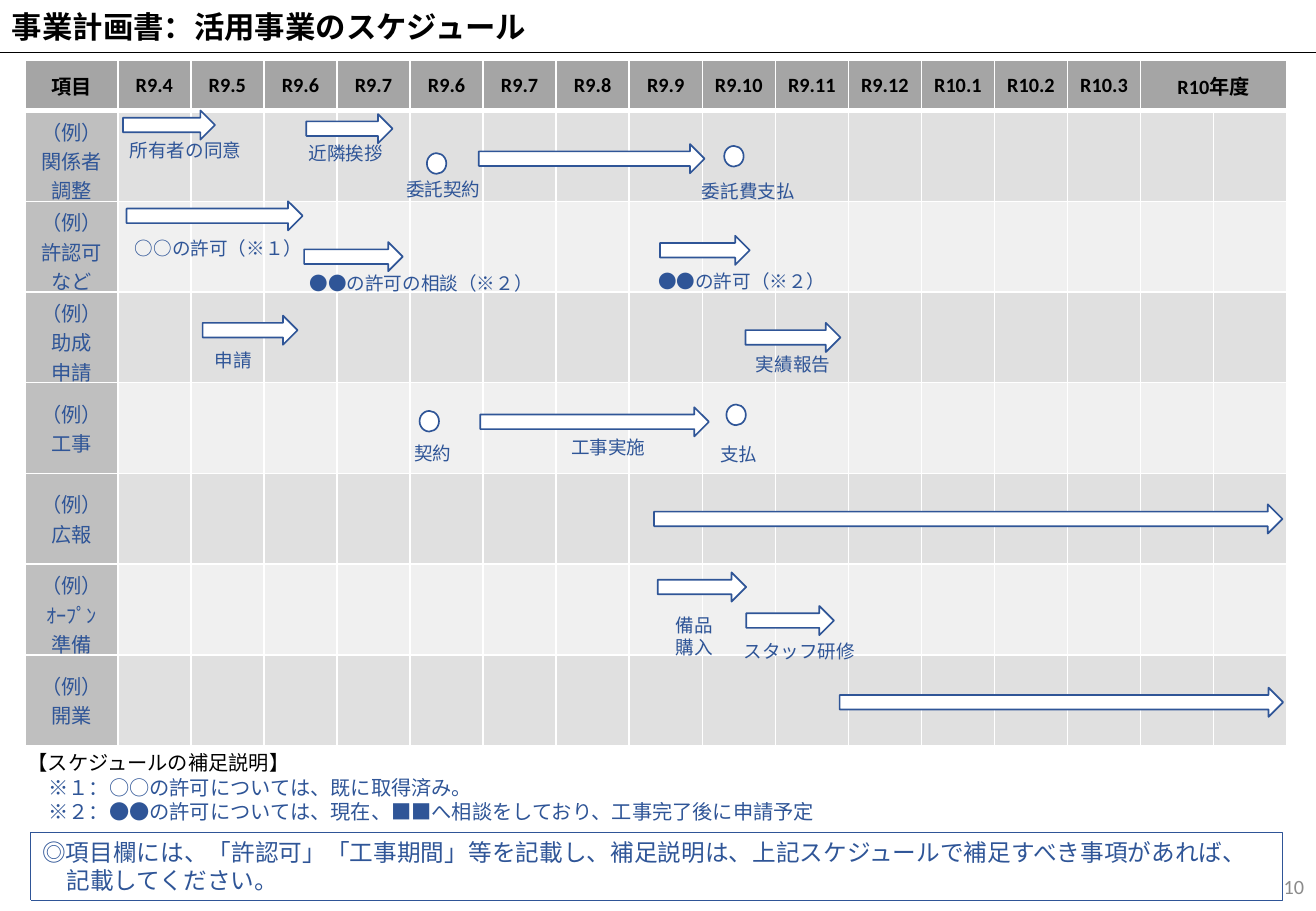
from collections import namedtuple

from lxml import etree
from pptx import Presentation
from pptx.dml.color import RGBColor
from pptx.enum.dml import MSO_LINE
from pptx.enum.shapes import MSO_CONNECTOR, MSO_SHAPE
from pptx.enum.text import MSO_ANCHOR as Anchor, PP_ALIGN as Align
from pptx.oxml import parse_xml
from pptx.oxml.ns import nsdecls, qn
from pptx.util import Inches, Pt

BLACK = RGBColor(0x00, 0x00, 0x00)
WHITE = RGBColor(0xFF, 0xFF, 0xFF)
BLUE = RGBColor(0x2F, 0x55, 0x97)
PAGE_GRAY = RGBColor(0x8B, 0x8B, 0x8B)
HEADER_GRAY = RGBColor(0xA5, 0xA5, 0xA5)
LABEL_GRAY = RGBColor(0xBF, 0xBF, 0xBF)
BANDS = [RGBColor(0xE0, 0xE0, 0xE0), RGBColor(0xF0, 0xF0, 0xF0)]

Box = namedtuple("Box", "left top width height")
SLIDE = Box(0, 0, 10.83, 7.5)
SCHEDULE = Box(0.21, 0.5, 10.38, 5.64)
LABEL_WIDTH, HEADER_HEIGHT = 0.76, 0.41

MONTHS = ["R9.4", "R9.5", "R9.6", "R9.7", "R9.6", "R9.7", "R9.8", "R9.9", "R9.10",
          "R9.11", "R9.12", "R10.1", "R10.2", "R10.3", "R10年度"]
COLUMNS = len(MONTHS) + 1  # the last heading spans two columns
ITEMS = [["関係者", "調整"], ["許認可など"], ["助成", "申請"], ["工事"], ["広報"],
         ["ｵｰﾌﾟﾝ", "準備"], ["開業"]]

# Marks on the schedule: month column, item row, length in columns
ARROWS = [
    (0.07, 0, 1.26), (2.58, 0.04, 1.18), (4.94, 0.37, 3.09),
    (0.12, 1, 2.41), (2.55, 1.45, 1.35), (7.42, 1.38, 1.23),
    (1.16, 2.26, 1.3), (8.59, 2.34, 1.3), (4.96, 3.27, 3.13),
    (7.34, 4.34, 8.6), (7.39, 5.09, 1.21), (8.6, 5.46, 1.2), (9.88, 6.36, 6.07),
]
MILESTONES = [(4.23, 0.47), (8.3, 0.39), (4.13, 3.31), (8.33, 3.24)]
CAPTIONS = [
    (0, 0.25, 2.11, "所有者の同意"), (2.45, 0.28, 1.53, "近隣挨拶"),
    (3.78, 0.68, 1.53, "委託契約"), (7.83, 0.7, 2.23, "委託費支払"),
    (0.07, 1.33, 3.01, "○○の許可（※１）"), (2.46, 1.71, 3.68, "●●の許可の相談（※２）"),
    (7.23, 1.69, 3.03, "●●の許可（※２）"), (1.16, 2.56, 1.06, "申請"),
    (8.57, 2.6, 1.53, "実績報告"), (3.89, 3.59, 1.53, "契約"),
    (6.04, 3.52, 1.53, "工事実施"), (8.08, 3.6, 1.53, "支払"),
    (7.47, 5.48, 0.96, "備品\n購入"), (8.4, 5.77, 2, "スタッフ研修"),
]


def write(frame, text, size=12, color=BLUE, bold=False, align=Align.LEFT, margin=0, indent=0):
    """Put each line of text in its own paragraph."""
    for index, line in enumerate(text.split("\n")):
        paragraph = frame.add_paragraph() if index else frame.paragraphs[0]
        paragraph.alignment = align
        if margin:
            properties = paragraph._p.get_or_add_pPr()
            properties.set("marL", str(Inches(margin)))
            properties.set("indent", str(Inches(indent)))
        run = paragraph.add_run()
        run.text = line
        font = run.font
        font.name, font.size, font.bold = "Calibri", Pt(size), bold
        font.color.rgb = color


def add_text(slide, box, text, anchor=Anchor.TOP, **style):
    frame = slide.shapes.add_textbox(*map(Inches, box)).text_frame
    frame.word_wrap = True
    frame.vertical_anchor = anchor
    write(frame, text, **style)
    return frame


def add_outlined(slide, kind, box, fill=WHITE, width=1):
    shape = slide.shapes.add_shape(kind, *map(Inches, box))
    shape.shadow.inherit = False
    if fill is None:
        shape.fill.background()
    else:
        shape.fill.solid()
        shape.fill.fore_color.rgb = fill
    shape.line.color.rgb = BLUE
    shape.line.width = Pt(width)
    return shape


def format_cell(cell, fill, bottom=0.96):
    properties = cell._tc.get_or_add_tcPr()
    for side in "LRTB":
        width = Pt(bottom if side == "B" else 0.96)
        properties.append(parse_xml(
            f'<a:ln{side} {nsdecls("a")} w="{width}"><a:solidFill>'
            f'<a:srgbClr val="{WHITE}"/></a:solidFill></a:ln{side}>'))
    cell.fill.solid()
    cell.fill.fore_color.rgb = fill
    cell.vertical_anchor = Anchor.MIDDLE


def add_title(slide, box):
    add_text(slide, Box(box.left, box.top + 0.02, box.width * 0.9, 0.4),
             "事業計画書：活用事業のスケジュール", size=18, color=BLACK, bold=True)
    rule_y = Inches(box.top + box.height)
    rule = slide.shapes.add_connector(MSO_CONNECTOR.STRAIGHT, Inches(box.left), rule_y,
                                      Inches(box.left + box.width), rule_y)
    rule.line.color.rgb = BLACK
    rule.line.width = Pt(0.75)
    etree.SubElement(rule._element.spPr, qn("a:effectLst"))


def add_schedule_table(slide, box, column, row):
    table = slide.shapes.add_table(len(ITEMS) + 1, COLUMNS + 1, *map(Inches, box)).table
    for index, table_column in enumerate(table.columns):
        table_column.width = Inches(column if index else LABEL_WIDTH)
    for index, table_row in enumerate(table.rows):
        table_row.height = Inches(row if index else HEADER_HEIGHT)

    # Fills and borders
    for row_index in range(len(ITEMS) + 1):
        for column_index in range(COLUMNS + 1):
            cell = table.cell(row_index, column_index)
            if row_index == 0:
                format_cell(cell, HEADER_GRAY, bottom=3)
            else:
                format_cell(cell, BANDS[(row_index - 1) % 2] if column_index else LABEL_GRAY)

    # Headings and item names
    table.cell(0, COLUMNS - 1).merge(table.cell(0, COLUMNS))
    for index, heading in enumerate(["項目"] + MONTHS):
        write(table.cell(0, index).text_frame, heading, color=BLACK, bold=True, align=Align.CENTER)
    for index, lines in enumerate(ITEMS, 1):
        write(table.cell(index, 0).text_frame, "\n".join(["（例）"] + lines), align=Align.CENTER)
    table.cell(1, 0).vertical_anchor = Anchor.TOP


def add_schedule(slide, box):
    column = (box.width - LABEL_WIDTH) / COLUMNS
    row = (box.height - HEADER_HEIGHT) / len(ITEMS)
    add_schedule_table(slide, box, column, row)

    def place(month, item, width, height):
        return Box(box.left + LABEL_WIDTH + month * column,
                   box.top + HEADER_HEIGHT + item * row, width, height)

    for month, item, length in ARROWS:
        add_outlined(slide, MSO_SHAPE.RIGHT_ARROW, place(month, item, length * column, 0.24))
    for month, item in MILESTONES:
        add_outlined(slide, MSO_SHAPE.OVAL, place(month, item, 0.16, 0.17))
    for month, item, length, text in CAPTIONS:
        add_text(slide, place(month, item, length * column, 0.28), text, size=11)


def add_notes(slide, box):
    frame = add_text(slide, box, "【スケジュールの補足説明】", color=BLACK)
    for note in ["※１：○○の許可については、既に取得済み。",
                 "※２：●●の許可については、現在、■■へ相談をしており、工事完了後に申請予定"]:
        paragraph = frame.add_paragraph()
        paragraph._p.get_or_add_pPr().set("marL", str(Inches(0.17)))
        run = paragraph.add_run()
        run.text = note
        run.font.name, run.font.size = "Calibri", Pt(12)
        run.font.color.rgb = BLUE


def add_guidance(slide, box):
    shape = add_outlined(slide, MSO_SHAPE.RECTANGLE, box, fill=None, width=0.25)
    shape.line.dash_style = MSO_LINE.ROUND_DOT
    shape.text_frame.word_wrap = True
    shape.text_frame.vertical_anchor = Anchor.TOP
    write(shape.text_frame,
          "◎項目欄には、「許認可」「工事期間」等を記載し、補足説明は、上記スケジュールで"
          "補足すべき事項があれば、記載してください。", size=14, margin=0.2, indent=-0.2)


def main():
    presentation = Presentation()
    presentation.slide_width = Inches(SLIDE.width)
    presentation.slide_height = Inches(SLIDE.height)
    slide = presentation.slides.add_slide(presentation.slide_layouts[6])
    add_title(slide, Box(0, 0, SLIDE.width, 0.43))
    add_text(slide, Box(8.4, 7.1, 2.43, 0.4), "10", anchor=Anchor.MIDDLE,
             color=PAGE_GRAY, align=Align.RIGHT)
    add_guidance(slide, Box(0.25, 6.85, 10.3, 0.56))
    add_schedule(slide, SCHEDULE)
    add_notes(slide, Box(0.13, 6.13, 6.94, 0.7))
    presentation.save("out.pptx")


if __name__ == "__main__":
    main()
